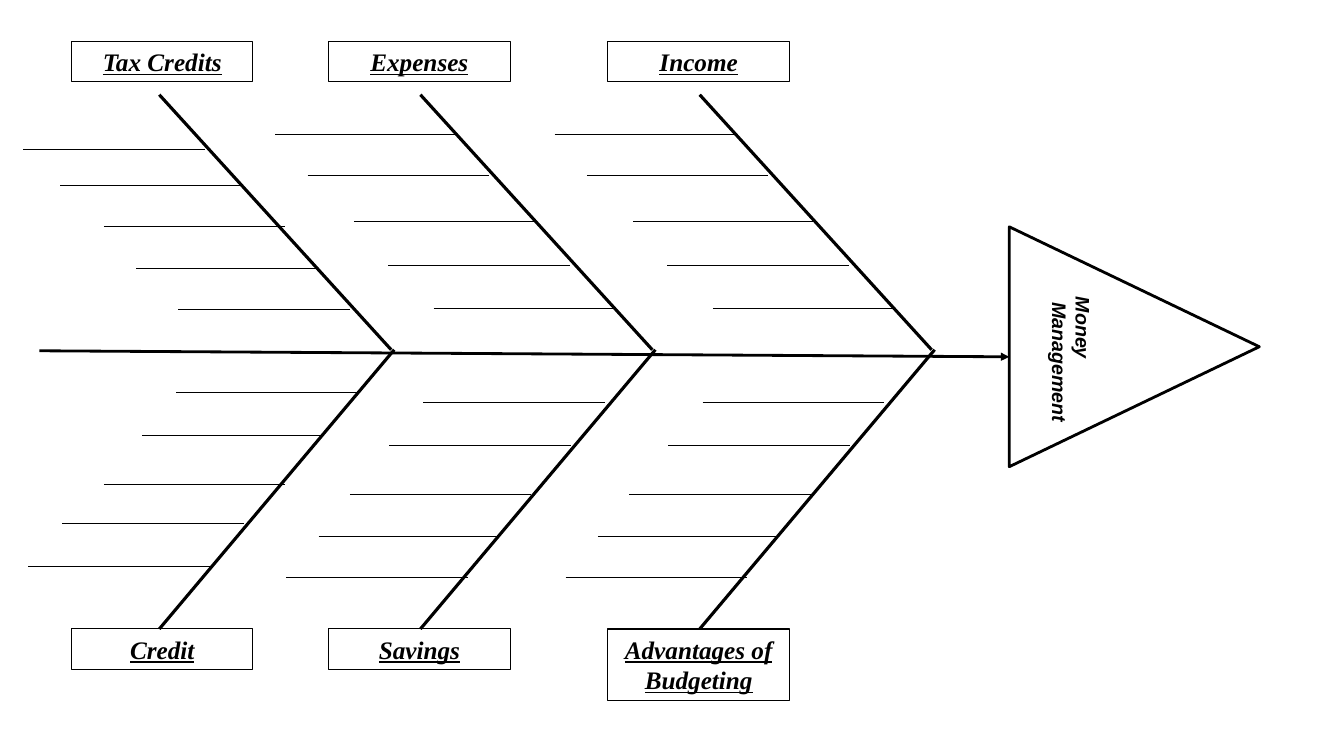
from dataclasses import dataclass

import pptx
import pptx.dml.color
import pptx.enum.shapes
import pptx.enum.text
import pptx.oxml
import pptx.oxml.ns
import pptx.util
from pptx.util import Inches

BLACK = pptx.dml.color.RGBColor(0x00, 0x00, 0x00)
WHITE = pptx.dml.color.RGBColor(0xFF, 0xFF, 0xFF)

TWIG_LENGTH = 1.8
BOX_WIDTH = 1.8
TOP_BOX_Y, BOTTOM_BOX_Y = 0.41, 6.24
RIB_TOP, SPINE_Y, RIB_BOTTOM = 0.94, 3.47, 6.24


@dataclass(frozen=True)
class Twig:
    x: float
    y: float
    length: float = TWIG_LENGTH


@dataclass(frozen=True)
class Bone:
    """A pair of ribs; twig positions are shifted right by twig_shift."""
    upper: str
    lower: str
    box_x: float
    rib_x: float
    twigs: tuple[Twig, ...]
    twig_shift: float = 0
    lower_height: float = 0.4


FIRST_TWIGS = (
    Twig(0.23, 1.48), Twig(0.6, 1.84), Twig(1.03, 2.25), Twig(1.35, 2.66),
    Twig(1.77, 3.07, 1.7),
    Twig(1.75, 3.89), Twig(1.41, 4.32), Twig(1.03, 4.81), Twig(0.62, 5.19),
    Twig(0.28, 5.62),
)
COMMON_TWIGS = (
    Twig(2.73, 1.33), Twig(3.05, 1.74), Twig(3.51, 2.2), Twig(3.85, 2.63),
    Twig(4.3, 3.06),
    Twig(4.2, 3.99), Twig(3.86, 4.42), Twig(3.47, 4.91), Twig(3.16, 5.32),
    Twig(2.84, 5.73),
)
BONES = (
    Bone("Tax Credits", "Credit", 0.71, 1.58, FIRST_TWIGS),
    Bone("Expenses", "Savings", 3.26, 4.17, COMMON_TWIGS),
    Bone("Income", "Advantages of Budgeting", 6.03, 6.94, COMMON_TWIGS,
         twig_shift=2.77, lower_height=0.71),
)


def add_line(slide, x1: float, y1: float, x2: float, y2: float,
             width: float, arrow: bool = False) -> None:
    line = slide.shapes.add_connector(
        pptx.enum.shapes.MSO_CONNECTOR.STRAIGHT,
        Inches(x1), Inches(y1), Inches(x2), Inches(y2))
    line.line.color.rgb = BLACK
    line.line.width = pptx.util.Pt(width)
    if arrow:
        ln = line.line._get_or_add_ln()
        ln.append(pptx.oxml.parse_xml(
            f'<a:tailEnd {pptx.oxml.ns.nsdecls("a")} type="triangle"/>'))
    line._element.spPr.append(pptx.oxml.parse_xml(
        f'<a:effectLst {pptx.oxml.ns.nsdecls("a")}/>'))


def style_font(p, name: str, size: float) -> None:
    p.font.name = name
    p.font.size = pptx.util.Pt(size)
    p.font.bold = p.font.italic = True
    p.font.color.rgb = BLACK


def add_label(slide, text: str, x: float, y: float, height: float) -> None:
    sp = slide.shapes.add_shape(
        pptx.enum.shapes.MSO_SHAPE.RECTANGLE,
        Inches(x), Inches(y), Inches(BOX_WIDTH), Inches(height))
    sp.shadow.inherit = False
    sp.fill.background()
    sp.line.color.rgb = BLACK
    sp.line.width = pptx.util.Pt(0.75)
    tf = sp.text_frame
    tf.word_wrap = True
    tf.auto_size = pptx.enum.text.MSO_AUTO_SIZE.SHAPE_TO_FIT_TEXT
    tf.vertical_anchor = pptx.enum.text.MSO_ANCHOR.TOP
    p = tf.paragraphs[0]
    p.text = text
    p.alignment = pptx.enum.text.PP_ALIGN.CENTER
    style_font(p, "Times New Roman", 18)
    p.font.underline = True


def add_head(slide) -> None:
    sp = slide.shapes.add_shape(
        pptx.enum.shapes.MSO_SHAPE.ISOSCELES_TRIANGLE,
        Inches(10.06), Inches(2.2), Inches(2.38), Inches(2.48))
    sp.rotation = 90
    sp.shadow.inherit = False
    sp.fill.solid()
    sp.fill.fore_color.rgb = WHITE
    sp.line.color.rgb = BLACK
    sp.line.width = pptx.util.Pt(2)
    tf = sp.text_frame
    tf.word_wrap = False
    tf.vertical_anchor = pptx.enum.text.MSO_ANCHOR.MIDDLE
    tf.text = "Money\n Management"
    for p in tf.paragraphs:
        p.alignment = pptx.enum.text.PP_ALIGN.LEFT
        style_font(p, "Arial", 14)


def add_bone(slide, bone: Bone) -> None:
    add_line(slide, bone.rib_x, RIB_TOP, bone.rib_x + 2.3, SPINE_Y, 2.25)
    add_line(slide, bone.rib_x + 2.33, SPINE_Y, bone.rib_x, RIB_BOTTOM, 2.25)
    for twig in bone.twigs:
        x = twig.x + bone.twig_shift
        add_line(slide, x, twig.y, x + twig.length, twig.y, 0.75)
    add_label(slide, bone.upper, bone.box_x, TOP_BOX_Y, 0.4)
    add_label(slide, bone.lower, bone.box_x, BOTTOM_BOX_Y, bone.lower_height)


def main() -> None:
    prs = pptx.Presentation()
    prs.slide_width, prs.slide_height = Inches(13.33), Inches(7.5)
    slide = prs.slides.add_slide(prs.slide_layouts[6])
    add_head(slide)
    add_line(slide, 0.39, 3.48, 10.01, 3.54, 2, arrow=True)
    for bone in BONES:
        add_bone(slide, bone)
    prs.save("out.pptx")


if __name__ == "__main__":
    main()
